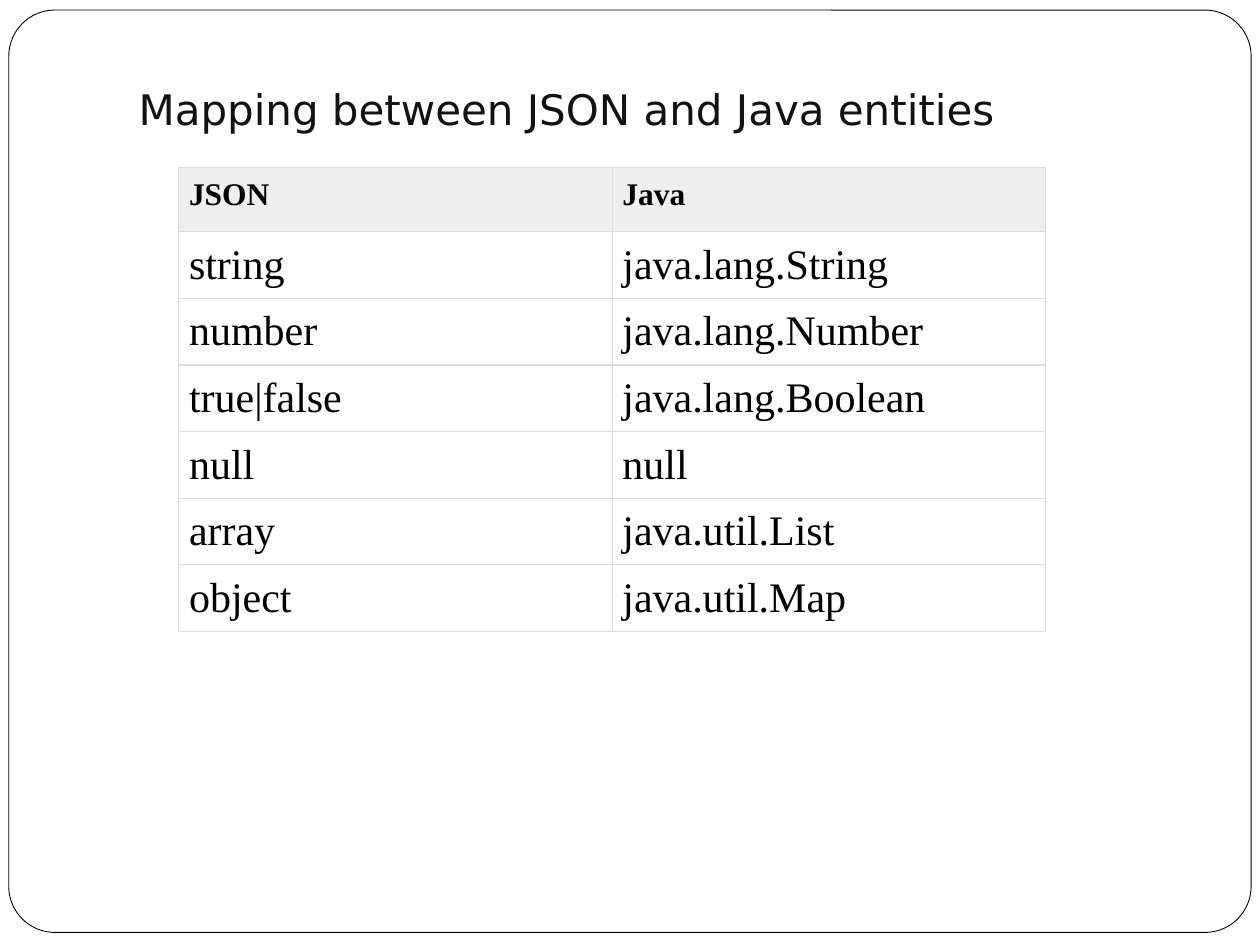
import pptx
import pptx.util
import pptx.dml.color
import pptx.enum.shapes
import pptx.enum.text
import pptx.oxml
import pptx.oxml.ns

WIDE, HIGH = 10, 7.5
INK = {"frame": "000000", "title": "121214", "text": "000000",
       "page": "FFFFFF", "head": "EEEEEE", "rule": "DDDDDD"}
ROWS = [
    ("JSON", "Java"),
    ("string", "java.lang.String"),
    ("number", "java.lang.Number"),
    ("true|false", "java.lang.Boolean"),
    ("null", "null"),
    ("array", "java.util.List"),
    ("object", "java.util.Map"),
]


def tint(name):
    return pptx.dml.color.RGBColor.from_string(INK[name])


def place(box):
    return [pptx.util.Inches(side) for side in box]


def write(body, text, font="Times New Roman", size=24, bold=False, ink="text"):
    para = body.paragraphs[0]
    para.alignment = pptx.enum.text.PP_ALIGN.LEFT
    run = para.add_run()
    run.text = text
    run.font.name = font
    run.font.size = pptx.util.Pt(size)
    run.font.bold = bold
    run.font.color.rgb = tint(ink)


def inset(part, left, top, right, base):
    part.margin_left, part.margin_top, part.margin_right, part.margin_bottom = place(
        (left, top, right, base))


def border(cell, ink, points):
    props = cell._tc.get_or_add_tcPr()
    space = pptx.oxml.ns.nsdecls("a")
    for side in "LRTB":
        props.append(pptx.oxml.parse_xml(
            f'<a:ln{side} {space} w="{int(pptx.util.Pt(points))}"><a:solidFill>'
            f'<a:srgbClr val="{INK[ink]}"/></a:solidFill></a:ln{side}>'))


def draw_frame(slide, box):
    kind = pptx.enum.shapes.MSO_SHAPE.ROUNDED_RECTANGLE
    frame = slide.shapes.add_shape(kind, *place(box))
    frame.adjustments[0] = 0.05
    frame.shadow.inherit = False
    frame.fill.solid()
    frame.fill.fore_color.rgb = tint("page")
    frame.line.color.rgb = tint("frame")
    frame.line.width = pptx.util.Pt(0.5)
    slide.shapes._spTree.insert(2, frame._element)


def draw_title(slide, box):
    title = slide.shapes.title
    title.left, title.top, title.width, title.height = place(box)
    body = title.text_frame
    body.word_wrap = True
    body.auto_size = pptx.enum.text.MSO_AUTO_SIZE.NONE
    body.vertical_anchor = pptx.enum.text.MSO_ANCHOR.BOTTOM
    inset(body, 0.1, 0.05, 0.1, 0.49)
    write(body, "Mapping between JSON and Java entities",
          font="DejaVu Sans", ink="title")


def draw_table(slide, box):
    table = slide.shapes.add_table(len(ROWS), len(ROWS[0]), *place(box)).table
    table.first_row = table.horz_banding = False
    for r, row in enumerate(ROWS):
        head = r == 0
        for c, text in enumerate(row):
            cell = table.cell(r, c)
            inset(cell, 0.08, 0.08, 0.08, 0.08)
            border(cell, "rule", 0.75)
            if head:
                cell.fill.solid()
                cell.fill.fore_color.rgb = tint("head")
            else:
                cell.fill.background()
            write(cell.text_frame, text, size=18 if head else 24, bold=head)


def main():
    deck = pptx.Presentation()
    deck.slide_width, deck.slide_height = place((WIDE, HIGH))
    slide = deck.slides.add_slide(deck.slide_layouts[5])
    edge = WIDE * 0.007
    draw_frame(slide, (edge, 0.08, WIDE - 2 * edge, 7.32))
    draw_title(slide, (WIDE * 0.1, HIGH * 0.04, WIDE * 0.85, 1.25))
    draw_table(slide, (1.42, 1.33, 6.88, len(ROWS) * 0.51))
    deck.save("out.pptx")


if __name__ == "__main__":
    main()
